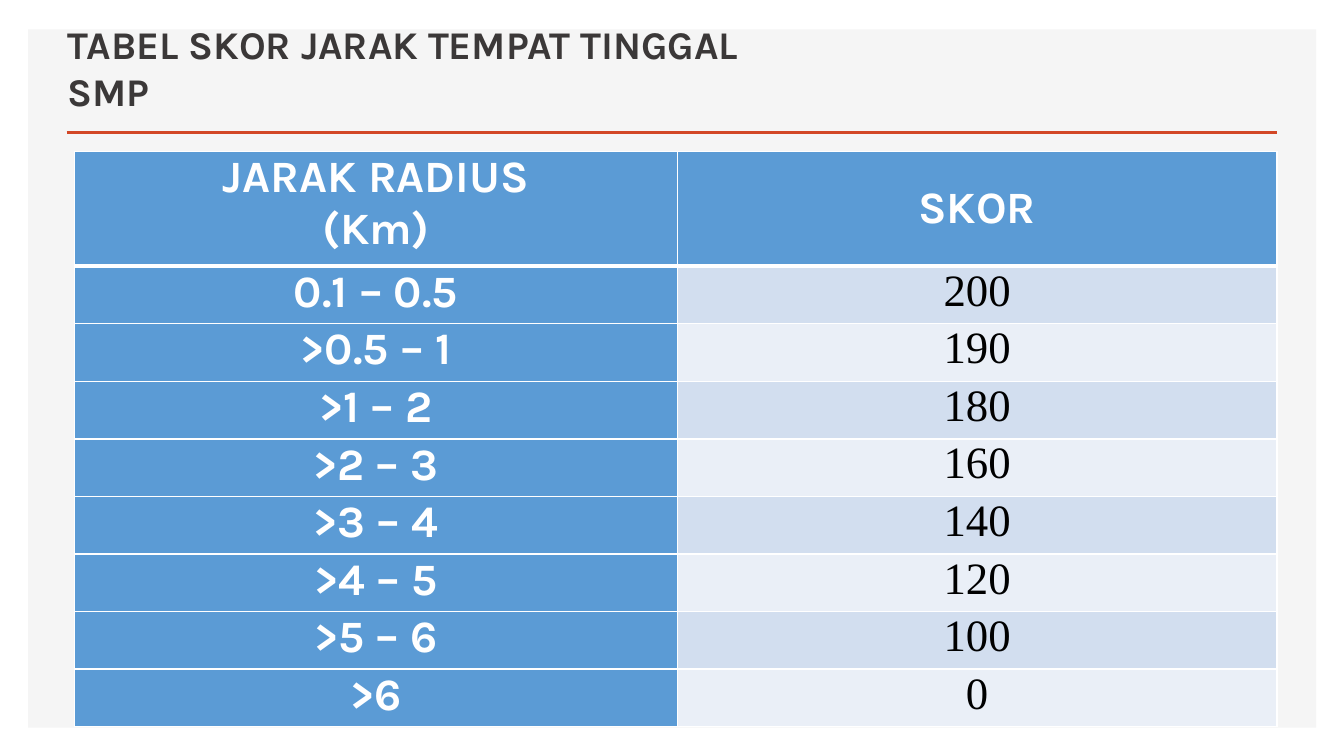
import pptx
import pptx.dml.color
import pptx.enum.shapes
import pptx.enum.text
import pptx.oxml.ns
import pptx.util
import lxml.etree
import dataclasses

Cm, Pt = pptx.util.Cm, pptx.util.Pt
Align = pptx.enum.text.PP_ALIGN
Anchor = pptx.enum.text.MSO_ANCHOR
qn = pptx.oxml.ns.qn


def rgb(value):
    return pptx.dml.color.RGBColor.from_string(value)


def assign(obj, values):
    for name, value in values.items():
        setattr(obj, name, value)


@dataclasses.dataclass(frozen=True)
class Theme:
    panel: str = "F5F5F5"
    accent: str = "D24726"
    title: str = "3B3838"
    head: str = "5B9BD5"
    bands: tuple = ("D2DEEF", "EAEFF7")
    light: str = "FFFFFF"
    dark: str = "000000"
    head_font: str = "Karla"
    body_font: str = "Times New Roman"
    title_size: int = 28
    table_size: int = 32


class SlideBuilder:
    def __init__(self, slide, theme):
        self.slide = slide
        self.theme = theme

    def text(self, tf, text, align, font, color):
        tf.text = text
        for p in tf.paragraphs:
            p.alignment = align
            for r in p.runs:
                assign(r.font, font)
                r.font.color.rgb = rgb(color)

    def panel(self, left, top, width, height):
        shapes = self.slide.shapes
        sp = shapes.add_shape(pptx.enum.shapes.MSO_SHAPE.RECTANGLE,
                              Cm(left), Cm(top), Cm(width), Cm(height))
        sp.shadow.inherit = False
        sp.fill.solid()
        sp.fill.fore_color.rgb = rgb(self.theme.panel)
        sp.line.fill.background()
        shapes._spTree.insert(2, sp._element)

    def rule(self, left, right, y):
        line = self.slide.shapes.add_connector(
            pptx.enum.shapes.MSO_CONNECTOR.STRAIGHT,
            Cm(left), Cm(y), Cm(right), Cm(y))
        line.line.color.rgb = rgb(self.theme.accent)
        line.line.width = Pt(2)
        lxml.etree.SubElement(line._element.spPr, qn("a:effectLst"))

    def title(self, text, left, top, width, height):
        t = self.theme
        sp = self.slide.shapes.title
        assign(sp, {"left": Cm(left), "top": Cm(top),
                    "width": Cm(width), "height": Cm(height)})
        tf = sp.text_frame
        assign(tf, {"word_wrap": True, "vertical_anchor": Anchor.BOTTOM,
                    "auto_size": pptx.enum.text.MSO_AUTO_SIZE.NONE})
        font = {"name": t.head_font, "size": Pt(t.title_size), "bold": True}
        self.text(tf, text, Align.LEFT, font, t.title)

    def borders(self, cell, widths):
        tcPr = cell._tc.get_or_add_tcPr()
        for side, width in widths.items():
            ln = lxml.etree.SubElement(tcPr, qn(f"a:ln{side}"), w=str(Pt(width)))
            fill = lxml.etree.SubElement(ln, qn("a:solidFill"))
            lxml.etree.SubElement(fill, qn("a:srgbClr"), val=self.theme.light)

    def cell(self, cell, text, row, col):
        t = self.theme
        head = row == 0 or col == 0
        self.borders(cell, {"L": 1, "R": 1, "T": 3 if row == 1 else 1,
                            "B": 3 if row == 0 else 1})
        cell.fill.solid()
        cell.fill.fore_color.rgb = rgb(t.head if head else t.bands[(row - 1) % 2])
        assign(cell, {"margin_left": Cm(0.18), "margin_right": Cm(0.18),
                      "margin_top": 0, "margin_bottom": 0,
                      "vertical_anchor": Anchor.MIDDLE if (row, col) == (0, 1)
                      else Anchor.TOP})
        font = {"name": t.head_font if head else t.body_font,
                "size": Pt(t.table_size), "bold": head}
        self.text(cell.text_frame, text, Align.CENTER, font,
                  t.light if head else t.dark)

    def table(self, rows, left, top, widths, head_height, row_height):
        heights = [head_height] + [row_height] * (len(rows) - 1)
        table = self.slide.shapes.add_table(
            len(rows), len(widths), Cm(left), Cm(top),
            Cm(sum(widths)), Cm(sum(heights))).table
        for column, width in zip(table.columns, widths):
            column.width = Cm(width)
        for i, (values, height) in enumerate(zip(rows, heights)):
            table.rows[i].height = Cm(height)
            for j, value in enumerate(values):
                self.cell(table.cell(i, j), value, i, j)


def main():
    prs = pptx.Presentation()
    assign(prs, {"slide_width": Cm(33.87), "slide_height": Cm(19.05)})
    s = SlideBuilder(prs.slides.add_slide(prs.slide_layouts[5]), Theme())
    s.panel(0.71, 0.74, 32.46, 17.6)
    s.rule(1.68, 32.18, 3.33)
    s.title("TABEL SKOR JARAK TEMPAT TINGGAL SMP", 1.45, 1.24, 19.1, 1.78)
    scores = [
        ("JARAK RADIUS\n(Km)", "SKOR"),
        ("0.1 – 0.5", "200"),
        (">0.5 – 1", "190"),
        (">1 – 2", "180"),
        (">2 – 3", "160"),
        (">3 – 4", "140"),
        (">4 – 5", "120"),
        (">5 – 6", "100"),
        (">6", "0"),
    ]
    s.table(scores, 1.88, 3.81, (15.19, 15.11), 2.9, 1.45)
    prs.save("out.pptx")


if __name__ == "__main__":
    main()
